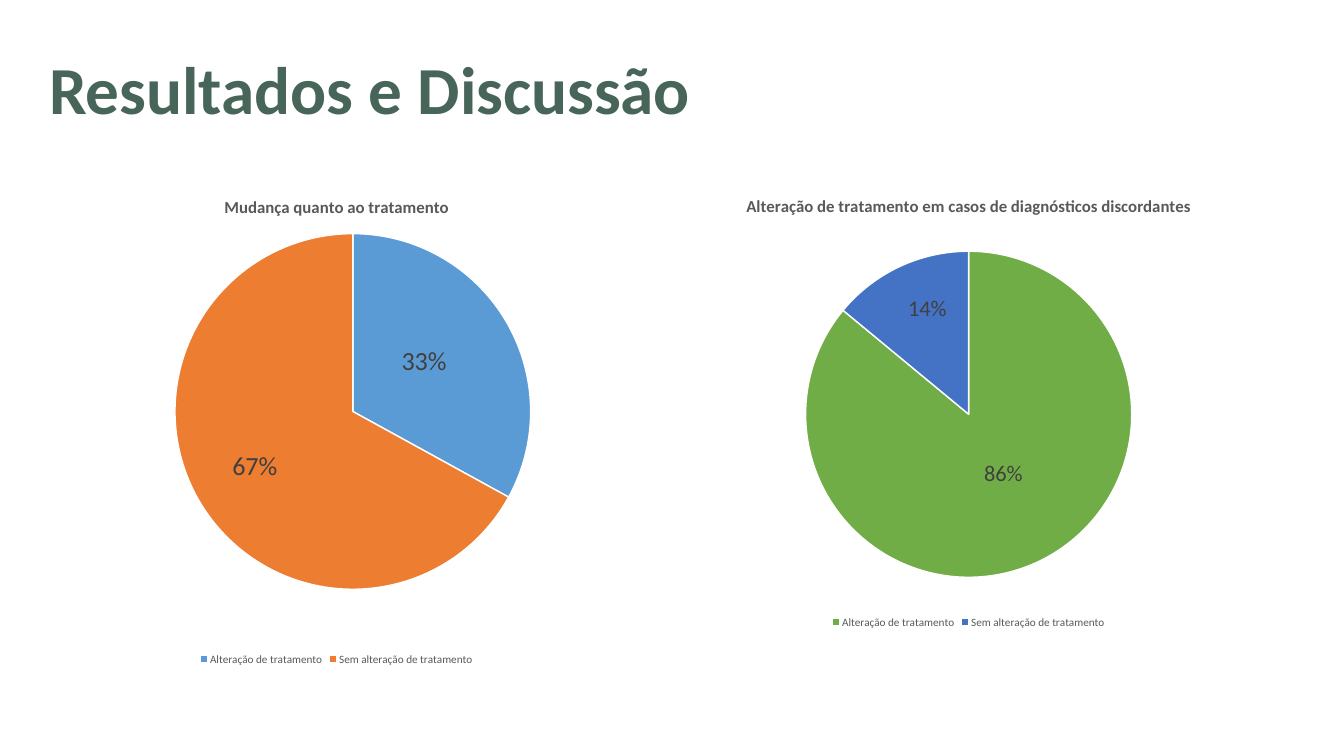
from lxml import etree
from pptx import Presentation
from pptx import util as u
from pptx.chart import data as chart_data
from pptx.dml import color
from pptx.enum import chart as chart_enum
from pptx.enum import text
from pptx.oxml import ns

CATEGORIES = ["Alteração de tratamento", "Sem alteração de tratamento"]


def rgb(value):
    return color.RGBColor.from_string(value)


def add_layout(parent, index, **values):
    """Insert a manual layout into a chart element, replacing any present."""
    for old in parent.findall(ns.qn("c:layout")):
        parent.remove(old)
    layout = etree.Element(ns.qn("c:layout"))
    manual = etree.SubElement(layout, ns.qn("c:manualLayout"))
    for name, value in values.items():
        etree.SubElement(manual, ns.qn("c:" + name)).set("val", str(value))
    parent.insert(index, layout)


class SlideBuilder:
    FONT = "Calibri"
    TITLE = "476559"
    GREY = "595959"
    LABEL = "404040"

    def __init__(self, deck):
        self.slide = deck.slides.add_slide(deck.slide_layouts[5])

    def style(self, font, size, hex_color, bold=False):
        font.name = self.FONT
        font.size = u.Pt(size)
        font.bold = bold
        font.color.rgb = rgb(hex_color)

    def title(self, words, left, top, width, height):
        box = self.slide.shapes.title
        box.left, box.top, box.width, box.height = map(u.Cm, (left, top, width, height))
        frame = box.text_frame
        frame.text = words
        frame.word_wrap = True
        frame.auto_size = text.MSO_AUTO_SIZE.NONE
        frame.vertical_anchor = text.MSO_ANCHOR.TOP
        para = frame.paragraphs[0]
        para.alignment = text.PP_ALIGN.LEFT
        para.line_spacing = u.Pt(92)
        self.style(para.runs[0].font, 72, self.TITLE, bold=True)

    def pie(self, heading, values, colors, place, plot_area, label_size, shifts):
        """Add a pie; plot_area and label shifts are fractions of the chart."""
        data = chart_data.CategoryChartData(number_format="0%")
        data.categories = CATEGORIES
        data.add_series("Series 1", values)
        chart = self.slide.shapes.add_chart(
            chart_enum.XL_CHART_TYPE.PIE, *map(u.Cm, place), data).chart
        self.style(chart.font, 10, "000000")

        chart.has_title = True
        frame = chart.chart_title.text_frame
        frame.text = heading
        self.style(frame.paragraphs[0].runs[0].font, 18, self.GREY, bold=True)
        chart.chart_title.include_in_layout = False

        chart.has_legend = True
        chart.legend.position = chart_enum.XL_LEGEND_POSITION.BOTTOM
        chart.legend.include_in_layout = False
        self.style(chart.legend.font, 12, self.GREY)

        plot = chart.plots[0]
        plot.vary_by_categories = True
        plot.has_data_labels = True
        plot.data_labels.show_value = True
        plot.data_labels.show_percentage = False
        plot.data_labels.number_format = "0%"
        plot.data_labels.number_format_is_linked = False
        for index, fill in enumerate(colors):
            point = plot.series[0].points[index]
            point.format.fill.solid()
            point.format.fill.fore_color.rgb = rgb(fill)
            point.format.line.color.rgb = rgb("FFFFFF")
            point.format.line.width = u.Pt(1.5)
            self.style(point.data_label.font, label_size, self.LABEL)
            point.data_label.position = chart_enum.XL_LABEL_POSITION.CENTER

        for label, (x, y) in zip(chart.element.iter(ns.qn("c:dLbl")), shifts):
            add_layout(label, 1, x=x, y=y)
            number = etree.Element(ns.qn("c:numFmt"), formatCode="0%", sourceLinked="0")
            label.insert(2, number)
        x, y, width, height = plot_area
        area = next(chart.element.iter(ns.qn("c:plotArea")))
        add_layout(area, 0, layoutTarget="inner", xMode="edge", yMode="edge",
                   x=x, y=y, w=width, h=height)


def main():
    deck = Presentation()
    deck.slide_width, deck.slide_height = u.Cm(50.8), u.Cm(28.58)
    page = SlideBuilder(deck)
    page.title("Resultados e Discussão", 1.6, 1.45, 32.4, 3.38)
    page.pie("Mudança quanto ao tratamento", (0.33, 0.67), ("5B9BD5", "ED7D31"),
             (2.54, 6.76, 20.37, 18.52), (0.2, 0.11, 0.66, 0.73),
             28, ((-0.01, -0.01), (-0.04, 0.02)))
    page.pie("Alteração de tratamento em casos de diagnósticos discordantes",
             (0.86, 0.14), ("70AD47", "4472C4"),
             (24.23, 6.76, 24.77, 17.12), (0.25, 0.16, 0.5, 0.72),
             24, ((0, -0.03), (-0.01, -0.07)))
    deck.save("out.pptx")


if __name__ == "__main__":
    main()
